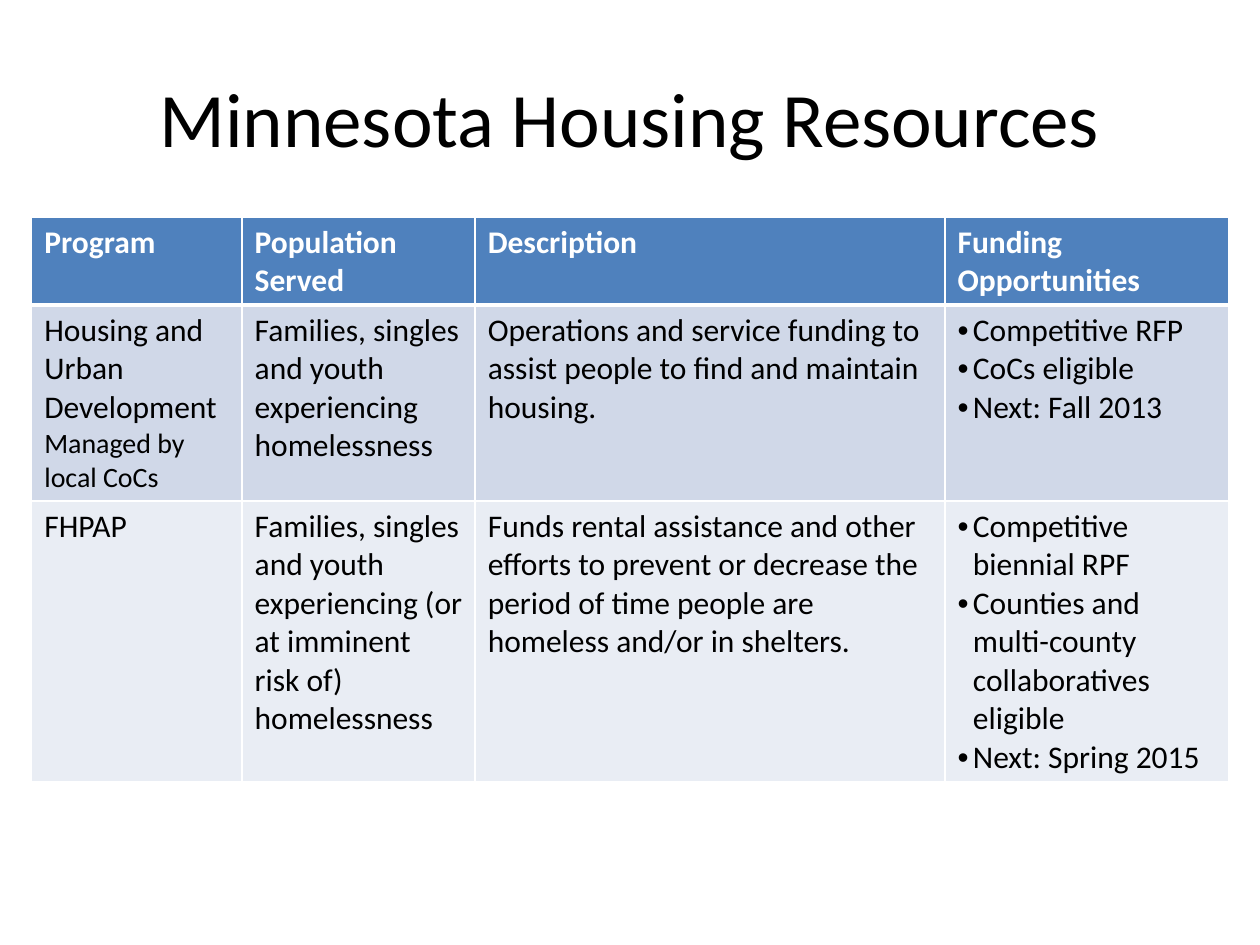
from lxml import etree
from pptx import Presentation
from pptx.dml.color import RGBColor
from pptx.enum.text import MSO_ANCHOR, PP_ALIGN
from pptx.oxml.ns import qn
from pptx.util import Cm, Pt

CENTER = PP_ALIGN.CENTER
MIDDLE = MSO_ANCHOR.MIDDLE

BLACK = RGBColor(0x00, 0x00, 0x00)
WHITE = RGBColor(0xFF, 0xFF, 0xFF)
HEADER_BLUE = RGBColor(0x4F, 0x81, 0xBD)
BANDS = (RGBColor(0xD0, 0xD8, 0xE8), RGBColor(0xE9, 0xED, 0xF4))

FONT = "Calibri"
BODY_SIZE = 18
NOTE_SIZE = 16
BULLET_INDENT = Cm(0.31)
COLUMN_WIDTHS = (4.24, 4.7, 9.47, 5.72)
ROW_HEIGHTS = (1.78, 3.95, 5.65)
FUNDING_COLUMN = 3

HEADERS = ("Program", "Population Served", "Description", "Funding Opportunities")
PROGRAMS = (
    (
        "Housing and Urban Development\nManaged by local CoCs",
        "Families, singles and youth experiencing homelessness",
        "Operations and service funding to assist people to find and maintain housing.",
        "Competitive RFP\nCoCs eligible\nNext: Fall 2013",
    ),
    (
        "FHPAP",
        "Families, singles and youth experiencing (or at imminent risk of) homelessness",
        "Funds rental assistance and other efforts to prevent or decrease the period "
        "of time people are homeless and/or in shelters.",
        "Competitive biennial RPF\nCounties and multi-county collaboratives eligible\n"
        "Next: Spring 2015",
    ),
)


def format_runs(paragraph, size, color, bold=False):
    """Apply the font to every run of a paragraph."""
    for run in paragraph.runs:
        run.font.name = FONT
        run.font.size = Pt(size)
        run.font.bold = bold
        run.font.color.rgb = color


def add_bullet(paragraph):
    """Give a paragraph a bullet with a hanging indent."""
    properties = paragraph._p.get_or_add_pPr()
    properties.set("marL", str(BULLET_INDENT))
    properties.set("indent", str(-BULLET_INDENT))
    etree.SubElement(properties, qn("a:buFont"), typeface="Arial")
    etree.SubElement(properties, qn("a:buChar"), char="•")


def set_borders(cell, top, bottom):
    """Draw white cell borders with the given top and bottom widths."""
    properties = cell._tc.get_or_add_tcPr()
    for side, width in (("L", 1), ("R", 1), ("T", top), ("B", bottom)):
        line = etree.SubElement(properties, qn(f"a:ln{side}"), w=str(Pt(width)))
        fill = etree.SubElement(line, qn("a:solidFill"))
        etree.SubElement(fill, qn("a:srgbClr"), val=str(WHITE))


def fill_cell(cell, text, background, color, bold=False, top=1, bottom=1):
    """Write and style one table cell."""
    set_borders(cell, top, bottom)
    cell.fill.solid()
    cell.fill.fore_color.rgb = background
    cell.text_frame.text = text
    for paragraph in cell.text_frame.paragraphs:
        format_runs(paragraph, BODY_SIZE, color, bold)


def add_title(slide, text):
    """Add the centred slide title."""
    box = slide.shapes.add_textbox(Cm(1.27), Cm(0.76), Cm(22.86), Cm(3.18))
    frame = box.text_frame
    frame.word_wrap = True
    frame.vertical_anchor = MIDDLE
    frame.text = text
    frame.paragraphs[0].alignment = CENTER
    format_runs(frame.paragraphs[0], 44, BLACK)


def add_program_table(slide):
    """Add the table of housing programs."""
    shape = slide.shapes.add_table(
        len(ROW_HEIGHTS), len(COLUMN_WIDTHS), Cm(0.64), Cm(4.37),
        Cm(sum(COLUMN_WIDTHS)), Cm(sum(ROW_HEIGHTS)),
    )
    table = shape.table
    for column, width in zip(table.columns, COLUMN_WIDTHS):
        column.width = Cm(width)
    for row, height in zip(table.rows, ROW_HEIGHTS):
        row.height = Cm(height)
    for index, header in enumerate(HEADERS):
        fill_cell(table.cell(0, index), header, HEADER_BLUE, WHITE, bold=True, bottom=3)
    for row_index, (program, band) in enumerate(zip(PROGRAMS, BANDS), start=1):
        top = 3 if row_index == 1 else 1
        for index, text in enumerate(program):
            fill_cell(table.cell(row_index, index), text, band, BLACK, top=top)
        for note in table.cell(row_index, 0).text_frame.paragraphs[1:]:
            format_runs(note, NOTE_SIZE, BLACK)
        for paragraph in table.cell(row_index, FUNDING_COLUMN).text_frame.paragraphs:
            add_bullet(paragraph)


def main():
    """Build and save the presentation."""
    presentation = Presentation()
    presentation.slide_width = Cm(25.4)
    presentation.slide_height = Cm(19.05)
    slide = presentation.slides.add_slide(presentation.slide_layouts[6])
    add_title(slide, "Minnesota Housing Resources")
    add_program_table(slide)
    presentation.save("out.pptx")


if __name__ == "__main__":
    main()
